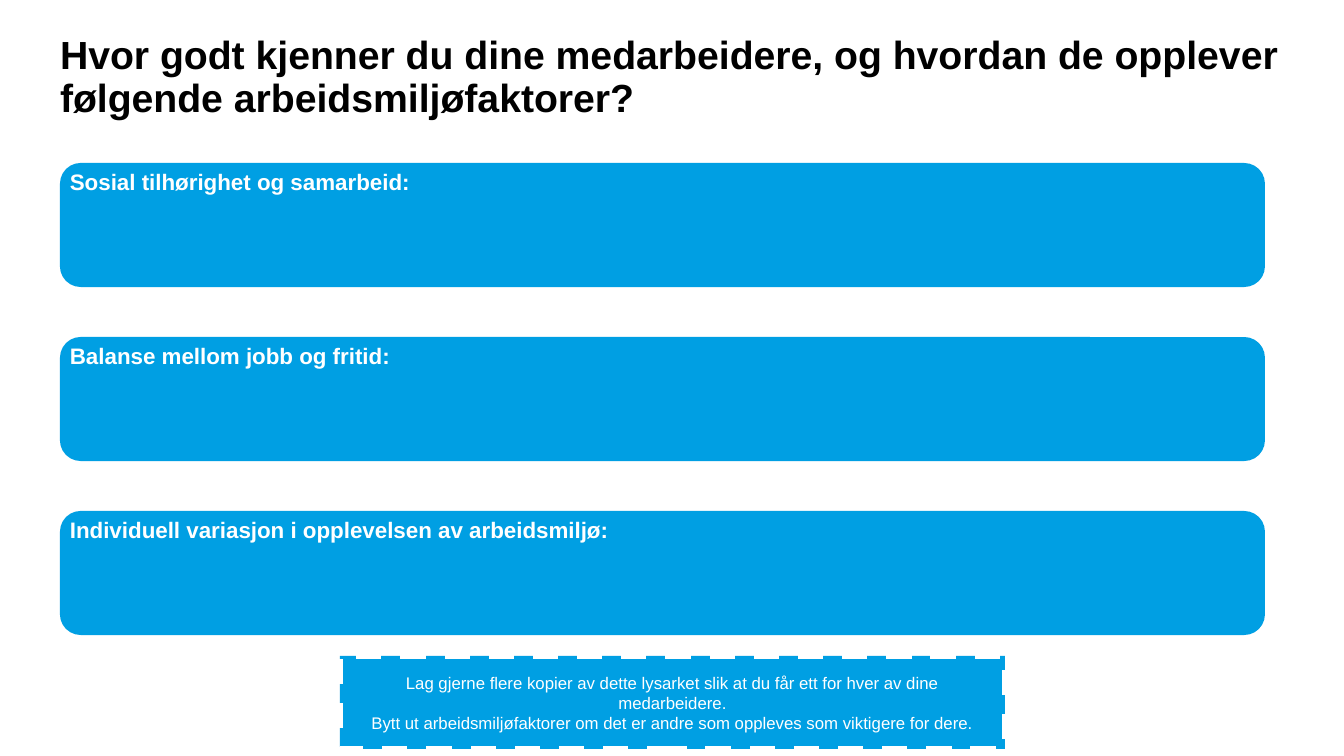
from dataclasses import dataclass

from pptx import Presentation
from pptx.dml.color import RGBColor
from pptx.enum.dml import MSO_LINE
from pptx.enum.shapes import MSO_SHAPE
from pptx.enum.text import MSO_ANCHOR, MSO_AUTO_SIZE, PP_ALIGN
from pptx.util import Emu, Pt

ROUNDED, RECTANGLE = MSO_SHAPE.ROUNDED_RECTANGLE, MSO_SHAPE.RECTANGLE
DASH = MSO_LINE.DASH
TOP, MIDDLE = MSO_ANCHOR.TOP, MSO_ANCHOR.MIDDLE
LEFT, CENTER = PP_ALIGN.LEFT, PP_ALIGN.CENTER
NO_FIT, GROW = MSO_AUTO_SIZE.NONE, MSO_AUTO_SIZE.SHAPE_TO_FIT_TEXT

PX_PER_INCH = 100.8
TITLE_ONLY = 5
FONT = "Arial"
BLUE, WHITE, BLACK = "009FE3", "FFFFFF", "000000"
FIRST_TOP, PANEL_PITCH = 163, 174
LABEL_HEIGHT = 37

TITLE = "Hvor godt kjenner du dine medarbeidere, og hvordan de opplever følgende arbeidsmiljøfaktorer?"
FACTORS = [
    "Sosial tilhørighet og samarbeid:",
    "Balanse mellom jobb og fritid:",
    "Individuell variasjon i opplevelsen av arbeidsmiljø:",
]
NOTE = [
    "Lag gjerne flere kopier av dette lysarket slik at du får ett for hver av dine medarbeidere.",
    "Bytt ut arbeidsmiljøfaktorer om det er andre som oppleves som viktigere for dere.",
]


@dataclass(frozen=True)
class Area:
    left: int
    top: int
    width: int
    height: int

    def emu(self):
        return [px(length) for length in (self.left, self.top, self.width, self.height)]


@dataclass(frozen=True)
class Panel:
    label: str
    area: Area


PANELS = [
    Panel(label, Area(60, FIRST_TOP + row * PANEL_PITCH, 1205, 124))
    for row, label in enumerate(FACTORS)
]


def px(length: int) -> Emu:
    return Emu(round(length * 914400 / PX_PER_INCH))


def color(value: str) -> RGBColor:
    return RGBColor.from_string(value)


def write(box, lines: list[str], *, size: int, ink: str = WHITE, bold: bool = False,
          align=LEFT, anchor=TOP, fit=NO_FIT, spacing: float = 1.0) -> None:
    frame = box.text_frame
    frame.word_wrap = True
    frame.auto_size = fit
    frame.vertical_anchor = anchor
    for index, line in enumerate(lines):
        para = frame.paragraphs[0] if index == 0 else frame.add_paragraph()
        para.alignment = align
        para.line_spacing = spacing
        span = para.add_run()
        span.text = line
        span.font.name = FONT
        span.font.size = Pt(size)
        span.font.bold = bold
        span.font.color.rgb = color(ink)


def add_block(page, preset, area: Area):
    box = page.shapes.add_shape(preset, *area.emu())
    box.shadow.inherit = False
    box.fill.solid()
    box.fill.fore_color.rgb = color(BLUE)
    box.line.fill.background()
    return box


def add_title(page) -> None:
    title = page.shapes.title
    title.left, title.top, title.width, title.height = Area(60, 36, 1224, 78).emu()
    frame = title.text_frame
    frame.margin_left = frame.margin_top = frame.margin_right = frame.margin_bottom = 0
    write(title, [TITLE], size=28, ink=BLACK, bold=True, spacing=0.9)


def add_panel(page, panel: Panel) -> None:
    area = panel.area
    add_block(page, ROUNDED, area)
    label_area = Area(area.left, area.top, area.width, LABEL_HEIGHT)
    label = page.shapes.add_textbox(*label_area.emu())
    write(label, [panel.label], size=16, bold=True, fit=GROW)


def add_note(page) -> None:
    note = add_block(page, RECTANGLE, Area(340, 656, 665, 93))
    note.line.color.rgb = color(WHITE)
    note.line.width = Pt(4.5)
    note.line.dash_style = DASH
    write(note, NOTE, size=12, align=CENTER, anchor=MIDDLE)


def main() -> None:
    deck = Presentation()
    deck.slide_width, deck.slide_height = px(1344), px(756)
    page = deck.slides.add_slide(deck.slide_layouts[TITLE_ONLY])
    add_title(page)
    for panel in PANELS:
        add_panel(page, panel)
    add_note(page)
    deck.save("out.pptx")


if __name__ == "__main__":
    main()
